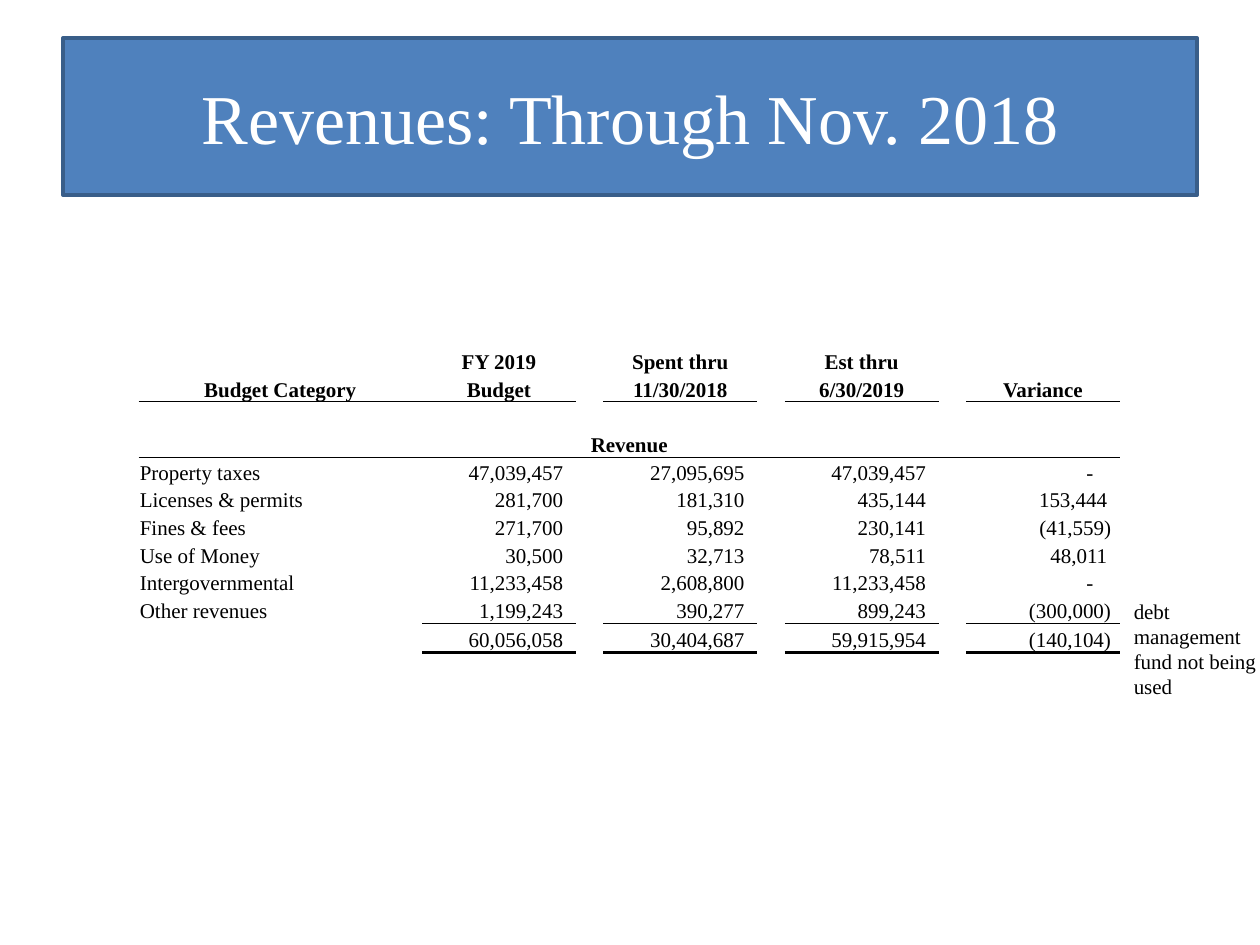
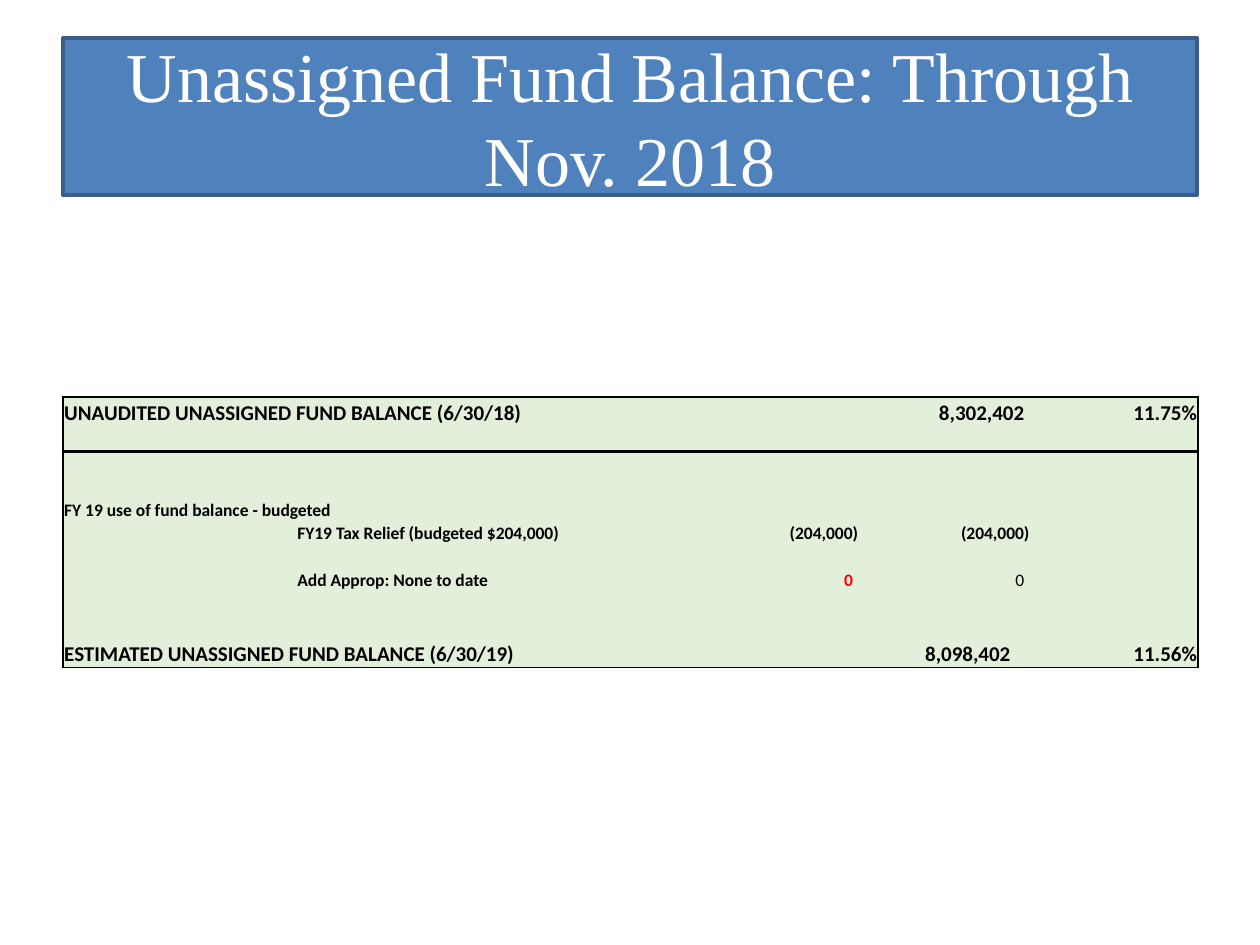
from lxml import etree
from pptx import Presentation
from pptx.dml.color import RGBColor
from pptx.enum import text as t
from pptx.oxml.ns import qn
from pptx.util import Inches, Pt

# Shared look
BLUE, NAVY, WHITE, BLACK = "4F81BD", "395E89", "FFFFFF", "000000"
GREEN, RED = "E2EFDA", "FF0000"
SERIF, SANS = "Times New Roman", "Calibri"
LEFT, MID, RIGHT = t.PP_ALIGN.LEFT, t.PP_ALIGN.CENTER, t.PP_ALIGN.RIGHT

# Revenue content
HEADS = [("FY 2019", "Budget"), ("Spent thru", "11/30/2018"),
         ("Est thru", "6/30/2019"), ("", "Variance")]
REVENUE = [
    ("Property taxes", "47,039,457", "27,095,695", "47,039,457", "-"),
    ("Licenses & permits", "281,700", "181,310", "435,144", "153,444"),
    ("Fines & fees", "271,700", "95,892", "230,141", "(41,559)"),
    ("Use of Money", "30,500", "32,713", "78,511", "48,011"),
    ("Intergovernmental", "11,233,458", "2,608,800", "11,233,458", "-"),
    ("Other revenues", "1,199,243", "390,277", "899,243", "(300,000)"),
    ("", "60,056,058", "30,404,687", "59,915,954", "(140,104)"),
]
NOTE = "debt management fund not being used"
REV_COLS = [0.75] * 3 + [1.22] + [0.22, 1.22] * 3
REV_ROWS = [0.22] * 11 + [0.23]
NUMS = [3, 5, 7, 9]

# Fund balance content: row, column, span, text, then style
BIG, SMALL = dict(size=12, bold=True), dict(size=10, bold=True)
FUND = [
    (0, 0, 3, "UNAUDITED UNASSIGNED FUND BALANCE (6/30/18)", BIG),
    (0, 5, 1, "8,302,402", dict(BIG, align=RIGHT, pad=0.05)),
    (0, 6, 1, "11.75%", dict(BIG, align=RIGHT)),
    (4, 0, 2, "FY 19 use of fund balance - budgeted", SMALL),
    (5, 1, 2, "FY19 Tax Relief (budgeted $204,000)", SMALL),
    (5, 4, 1, "(204,000)", dict(SMALL, align=RIGHT)),
    (5, 5, 1, "(204,000)", dict(SMALL, align=RIGHT)),
    (7, 1, 2, "Add Approp: None to date", SMALL),
    (7, 4, 1, "0", dict(SMALL, align=RIGHT, pad=0.05, color=RED)),
    (7, 5, 1, "0", dict(size=10, align=RIGHT, pad=0.05)),
    (10, 0, 3, "ESTIMATED UNASSIGNED FUND BALANCE (6/30/19)", BIG),
    (10, 5, 1, "8,098,402", dict(BIG, align=RIGHT, pad=0.16)),
    (10, 6, 1, "11.56%", dict(BIG, align=RIGHT)),
]
FUND_COLS = [1.85, 1.32, 1.07, 0.98, 1.1, 1.36, 1.33]
FUND_ROWS = [0.23, 0.2, 0.19, 0.18, 0.19, 0.18, 0.18, 0.19, 0.18, 0.19, 0.24]


def rgb(code):
    return RGBColor.from_string(code)


def style(para, font, size, color=BLACK, bold=False, align=LEFT):
    para.alignment = align
    para.font.name, para.font.size = font, Pt(size)
    para.font.bold, para.font.color.rgb = bold, rgb(color)


def add_slide(prs, title):
    slide = prs.slides.add_slide(prs.slide_layouts[5])
    band = slide.shapes.title
    band.left, band.top = Inches(0.5), Inches(0.3)
    band.width, band.height = Inches(9), Inches(1.25)
    band.fill.solid()
    band.fill.fore_color.rgb = rgb(BLUE)
    band.line.color.rgb = rgb(NAVY)
    band.line.width = Pt(2)
    frame = band.text_frame
    frame.text = title
    frame.auto_size = t.MSO_AUTO_SIZE.NONE
    frame.vertical_anchor = t.MSO_ANCHOR.MIDDLE
    style(frame.paragraphs[0], SERIF, 40, WHITE, align=MID)
    return slide


def border(cell, side, width):
    props = cell._tc.get_or_add_tcPr()
    line = etree.SubElement(props, qn("a:ln" + side), w=str(Pt(width or 0)))
    if width:
        fill = etree.SubElement(line, qn("a:solidFill"))
        etree.SubElement(fill, qn("a:srgbClr"), val=BLACK)
    else:
        etree.SubElement(line, qn("a:noFill"))


def add_grid(slide, left, top, cols, rows, fill, rules, edge=0):
    """Blank table; rules maps (row boundary, column) to a line width."""
    grid = slide.shapes.add_table(
        len(rows), len(cols), Inches(left), Inches(top),
        Inches(sum(cols)), Inches(sum(rows))).table
    grid.first_row = grid.horz_banding = False
    for col, width in zip(grid.columns, cols):
        col.width = Inches(width)
    for r, height in enumerate(rows):
        grid.rows[r].height = Inches(height)
        for c in range(len(cols)):
            cell = grid.cell(r, c)
            border(cell, "L", edge if c == 0 else 0)
            border(cell, "R", edge if c == len(cols) - 1 else 0)
            border(cell, "T", rules.get((r, c)))
            border(cell, "B", rules.get((r + 1, c)))
            cell.fill.solid()
            cell.fill.fore_color.rgb = rgb(fill)
            cell.margin_left = cell.margin_right = Inches(0.01)
            cell.margin_top, cell.margin_bottom = Inches(0.01), 0
            cell.vertical_anchor = t.MSO_ANCHOR.BOTTOM
            # Small empty text keeps the row at its height
            para = cell.text_frame.paragraphs[0]
            etree.SubElement(para._p, qn("a:endParaRPr"), sz="800")
    return grid


def put(grid, row, col, span, words, font, pad=0.01, **look):
    cell = grid.cell(row, col)
    if span > 1:
        cell.merge(grid.cell(row, col + span - 1))
    cell.text = words
    cell.margin_right = Inches(pad)
    style(cell.text_frame.paragraphs[0], font, **look)


def num_pad(words):
    if words == "-":
        return 0.21
    return 0.07 if words.endswith(")") else 0.1


def revenue(prs):
    slide = add_slide(prs, "Revenues: Through Nov. 2018")
    rules = {(3, c): 0.5 for c in [0, 1, 2] + NUMS}
    rules.update({(5, c): 0.5 for c in range(len(REV_COLS))})
    rules.update({(11, c): 0.5 for c in NUMS})
    rules.update({(12, c): 2 for c in NUMS})
    grid = add_grid(slide, 1.1, 2.53, REV_COLS, REV_ROWS, WHITE, rules)

    # Headings
    head = dict(font=SERIF, size=12, bold=True, align=MID)
    put(grid, 2, 0, 3, "Budget Category", **head)
    put(grid, 4, 0, 10, "Revenue", **head)
    for c, pair in zip(NUMS, HEADS):
        for r, words in enumerate(pair, 1):
            if words:
                put(grid, r, c, 1, words, **head)

    # Amounts
    for r, (name, *sums) in enumerate(REVENUE, 5):
        if name:
            put(grid, r, 0, 2, name, SERIF, size=12)
        for c, words in zip(NUMS, sums):
            put(grid, r, c, 1, words, SERIF, num_pad(words),
                size=12, align=RIGHT)

    # Side note
    note = slide.shapes.add_textbox(Inches(8.9), Inches(4.7),
                                    Inches(1.1), Inches(0.94)).text_frame
    note.word_wrap = True
    note.margin_right = 0
    note.text = NOTE
    style(note.paragraphs[0], SERIF, 12)


def fund(prs):
    slide = add_slide(prs, "Unassigned Fund Balance: Through Nov. 2018")
    lines = {0: 1, 2: 2, len(FUND_ROWS): 1}
    rules = {(r, c): width for r, width in lines.items()
             for c in range(len(FUND_COLS))}
    grid = add_grid(slide, 0.5, 3.15, FUND_COLS, FUND_ROWS, GREEN, rules, 1)
    for row, col, span, words, look in FUND:
        put(grid, row, col, span, words, SANS, **look)


def main():
    prs = Presentation()
    prs.slide_width, prs.slide_height = Inches(10), Inches(7.5)
    revenue(prs)
    fund(prs)
    prs.save("out.pptx")


if __name__ == "__main__":
    main()
